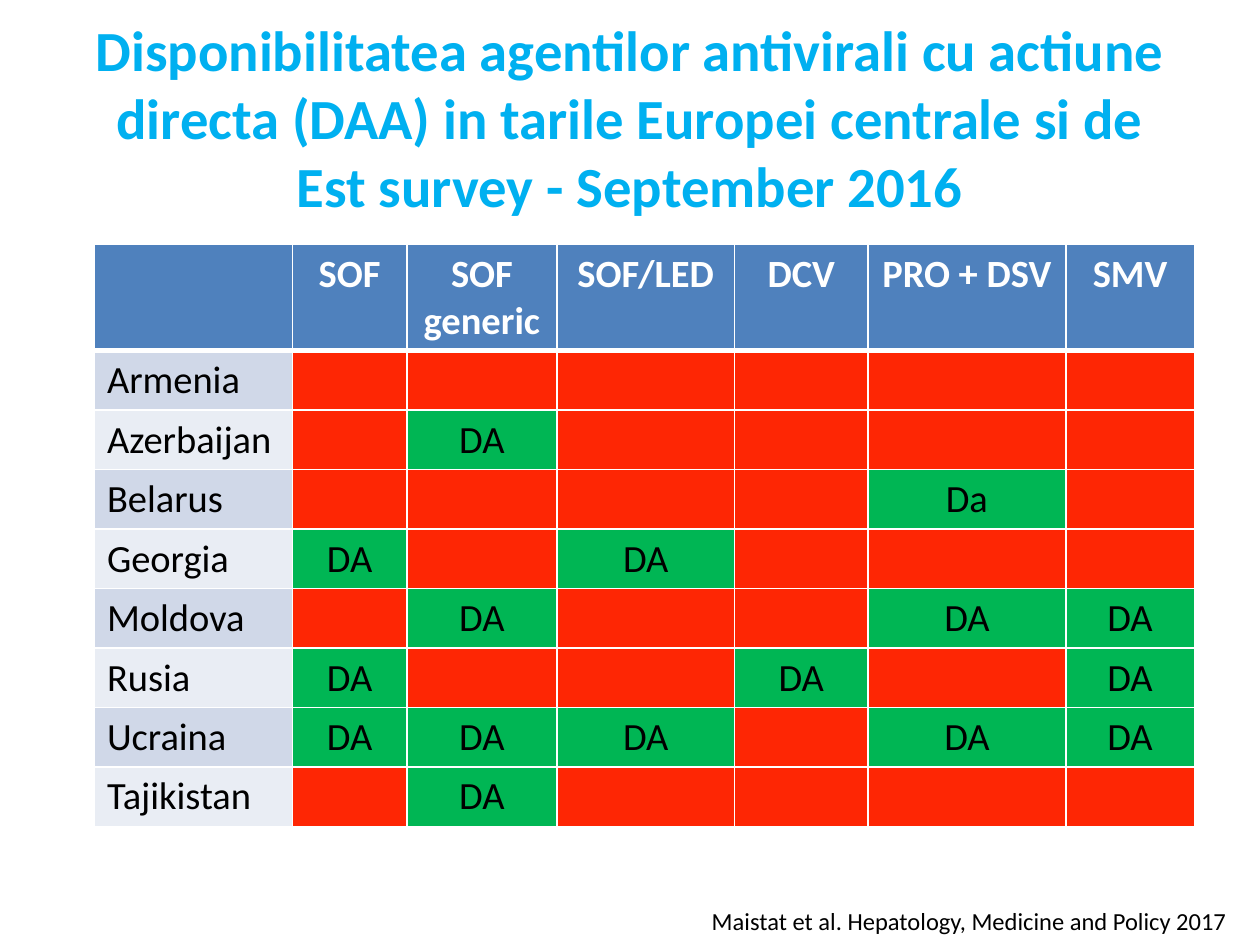
from typing import NamedTuple

from lxml import etree
from pptx import Presentation
from pptx.dml.color import RGBColor
from pptx.enum.text import MSO_ANCHOR, MSO_AUTO_SIZE, PP_ALIGN
from pptx.oxml.ns import qn
from pptx.util import Inches, Pt

CENTER, LEFT = PP_ALIGN.CENTER, PP_ALIGN.LEFT
MIDDLE = MSO_ANCHOR.MIDDLE
NO_AUTOFIT = MSO_AUTO_SIZE.NONE
TITLE_ONLY = 5
WIDTH, HEIGHT = Inches(10), Inches(7.5)
FONT = "Calibri"
COLORS = {
    "title": "00B0F0",
    "header": "4F81BD",
    "band_dark": "D0D8E8",
    "band_light": "E9EDF4",
    "available": "00B654",
    "missing": "FE2604",
    "white": "FFFFFF",
    "black": "000000",
}


class Country(NamedTuple):
    name: str
    answers: dict[str, str]


class Look(NamedTuple):
    fill: str
    color: str = "black"
    bold: bool = False
    align: PP_ALIGN = CENTER


DRUG_WIDTHS = {
    "SOF": 0.91, "SOF generic": 1.19, "SOF/LED": 1.41,
    "DCV": 1.06, "PRO + DSV": 1.57, "SMV": 1.02,
}
NAME_WIDTH = 1.57
HEADER_HEIGHT, ROW_HEIGHT = 0.84, 0.47
COUNTRIES = [
    Country("Armenia", {}),
    Country("Azerbaijan", {"SOF generic": "DA"}),
    Country("Belarus", {"PRO + DSV": "Da"}),
    Country("Georgia", {"SOF": "DA", "SOF/LED": "DA"}),
    Country("Moldova", {"SOF generic": "DA", "PRO + DSV": "DA", "SMV": "DA"}),
    Country("Rusia", {"SOF": "DA", "DCV": "DA", "SMV": "DA"}),
    Country("Ucraina", {"SOF": "DA", "SOF generic": "DA", "SOF/LED": "DA",
                        "PRO + DSV": "DA", "SMV": "DA"}),
    Country("Tajikistan", {"SOF generic": "DA"}),
]


def rgb(name: str) -> RGBColor:
    return RGBColor.from_string(COLORS[name])


def write(paragraph, text: str, size: float, color: str, bold: bool, align: PP_ALIGN) -> None:
    paragraph.text = text
    paragraph.alignment = align
    font = paragraph.font
    font.name, font.size, font.bold = FONT, Pt(size), bold
    font.color.rgb = rgb(color)


def add_borders(cell, top: float, bottom: float) -> None:
    """Draw white borders, with widths in points; call before filling the cell."""
    properties = cell._tc.get_or_add_tcPr()
    for side, width in {"lnL": 1, "lnR": 1, "lnT": top, "lnB": bottom}.items():
        line = etree.SubElement(properties, qn(f"a:{side}"), w=str(Pt(width)))
        fill = etree.SubElement(line, qn("a:solidFill"))
        etree.SubElement(fill, qn("a:srgbClr"), val=COLORS["white"])


def fill_cell(cell, text: str, look: Look, top: float = 1, bottom: float = 1) -> None:
    add_borders(cell, top, bottom)
    cell.fill.solid()
    cell.fill.fore_color.rgb = rgb(look.fill)
    write(cell.text_frame.paragraphs[0], text, 22, look.color, look.bold, look.align)


def add_title(slide) -> None:
    title = slide.shapes.title
    title.left, title.top = int(WIDTH * 0.05), int(HEIGHT * 0.04)
    title.width, title.height = int(WIDTH * 0.9), Inches(1.25)
    frame = title.text_frame
    frame.auto_size = NO_AUTOFIT
    frame.vertical_anchor = MIDDLE
    write(frame.paragraphs[0],
          "Disponibilitatea agentilor antivirali cu actiune directa (DAA) in tarile "
          "Europei centrale si de Est survey - September 2016",
          32.4, "title", True, CENTER)


def add_availability_table(slide) -> None:
    widths = [NAME_WIDTH, *DRUG_WIDTHS.values()]
    heights = [HEADER_HEIGHT] + [ROW_HEIGHT] * len(COUNTRIES)
    table = slide.shapes.add_table(
        len(heights), len(widths), Inches(0.75), Inches(1.94),
        Inches(sum(widths)), Inches(sum(heights))).table
    for column, width in zip(table.columns, widths):
        column.width = Inches(width)
    for row, height in zip(table.rows, heights):
        row.height = Inches(height)

    header = Look("header", "white", True)
    for column, text in enumerate(["", *DRUG_WIDTHS]):
        fill_cell(table.cell(0, column), text, header, bottom=3)
    for row, country in enumerate(COUNTRIES, start=1):
        top = 3 if row == 1 else 1
        band = "band_dark" if row % 2 else "band_light"
        fill_cell(table.cell(row, 0), country.name, Look(band, align=LEFT), top)
        for column, drug in enumerate(DRUG_WIDTHS, start=1):
            answer = country.answers.get(drug, "")
            look = Look("available" if answer else "missing")
            fill_cell(table.cell(row, column), answer, look, top)


def add_citation(slide) -> None:
    left, top = Inches(5.55), Inches(7.14)
    box = slide.shapes.add_textbox(left, top, WIDTH - left, Inches(0.34))
    box.text_frame.word_wrap = True
    write(box.text_frame.paragraphs[0],
          "Maistat et al. Hepatology, Medicine and Policy 2017", 14, "black", False, LEFT)


def main() -> None:
    presentation = Presentation()
    presentation.slide_width, presentation.slide_height = WIDTH, HEIGHT
    slide = presentation.slides.add_slide(presentation.slide_layouts[TITLE_ONLY])
    add_title(slide)
    add_availability_table(slide)
    add_citation(slide)
    presentation.save("out.pptx")


if __name__ == "__main__":
    main()
